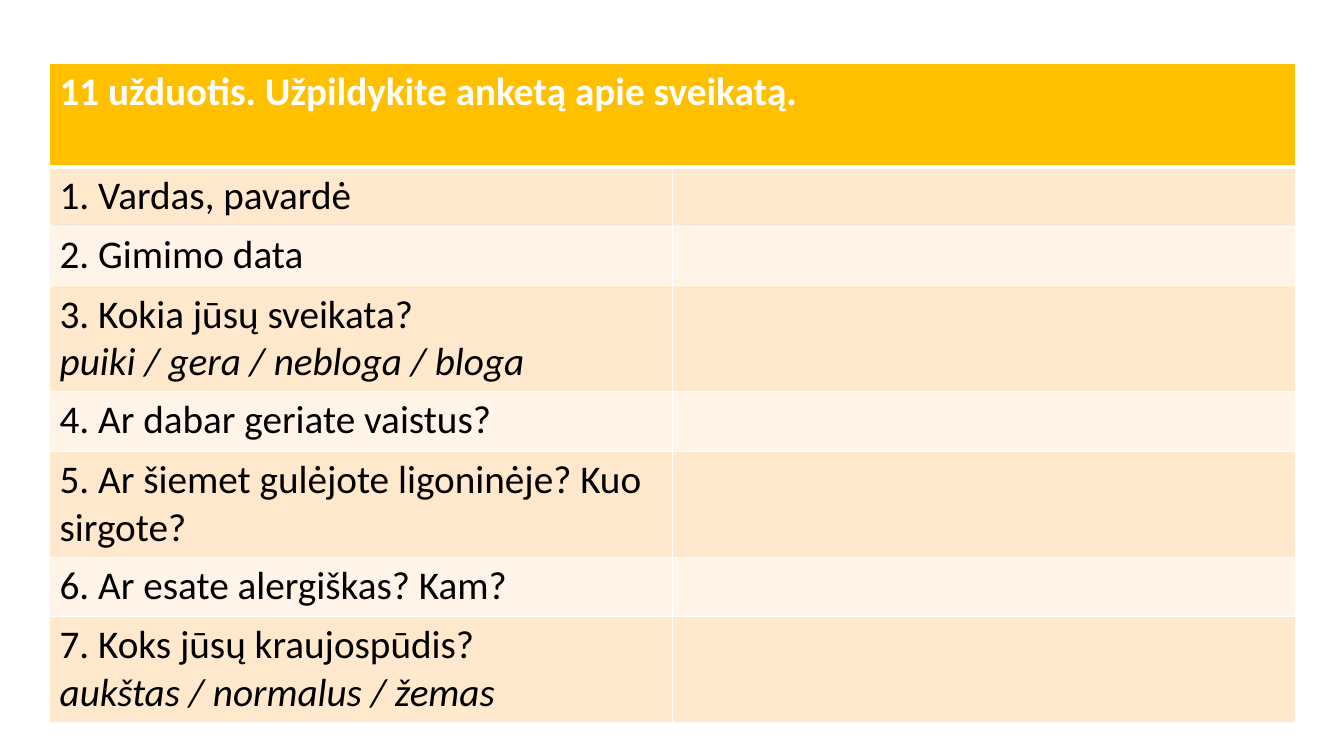
from dataclasses import dataclass

from lxml import etree
from pptx import Presentation
from pptx import util as u
from pptx.dml.color import RGBColor
from pptx.oxml import ns


@dataclass(frozen=True)
class Theme:
    font: str = "Calibri"
    size: int = 28
    header: str = "FFC000"
    bands: tuple = ("FFE8CC", "FFF4E7")
    header_text: str = "FFFFFF"
    text: str = "000000"
    border: str = "FFFFFF"
    thin: int = 1
    thick: int = 3


THEME = Theme()
TITLE = "11 užduotis. Užpildykite anketą apie sveikatą."
# Each question is followed by its answer choices, if it has any.
QUESTIONS = [
    ("1. Vardas, pavardė", ""),
    ("2. Gimimo data", ""),
    ("3. Kokia jūsų sveikata?", "puiki / gera / nebloga / bloga"),
    ("4. Ar dabar geriate vaistus?", ""),
    ("5. Ar šiemet gulėjote ligoninėje? Kuo sirgote?", ""),
    ("6. Ar esate alergiškas? Kam?", ""),
    ("7. Koks jūsų kraujospūdis?", "aukštas / normalus / žemas"),
]
ONE_LINE, TWO_LINES = u.Cm(1.5), u.Cm(2.6)
LINE_LIMIT = 40  # characters that fit on one line of a question cell


def set_borders(cell, bottom):
    properties = cell._tc.get_or_add_tcPr()
    for index, side in enumerate("LRTB"):
        width = bottom if side == "B" else THEME.thin
        line = etree.Element(ns.qn(f"a:ln{side}"), w=str(u.Pt(width)))
        fill = etree.SubElement(line, ns.qn("a:solidFill"))
        etree.SubElement(fill, ns.qn("a:srgbClr"), val=THEME.border)
        properties.insert(index, line)


def style_cell(cell, color, bottom=THEME.thin):
    cell.fill.solid()
    cell.fill.fore_color.rgb = RGBColor.from_string(color)
    set_borders(cell, bottom)


def add_run(paragraph, words, color, bold=False, italic=False):
    run = paragraph.add_run()
    run.text = words
    run.font.name = THEME.font
    run.font.size = u.Pt(THEME.size)
    run.font.bold = bold
    run.font.italic = italic
    run.font.color.rgb = RGBColor.from_string(color)


def add_header(table):
    for cell in table.rows[0].cells:
        style_cell(cell, THEME.header, THEME.thick)
    title = table.cell(0, 0)
    title.merge(table.cell(0, 1))
    add_run(title.text_frame.paragraphs[0], TITLE, THEME.header_text, bold=True)


def add_question(row, question, choices, band):
    row.height = TWO_LINES if choices or len(question) > LINE_LIMIT else ONE_LINE
    for cell in row.cells:
        style_cell(cell, band)
    frame = row.cells[0].text_frame
    add_run(frame.paragraphs[0], question, THEME.text)
    if choices:
        add_run(frame.add_paragraph(), choices, THEME.text, italic=True)


def add_questionnaire(slide, left, top, width):
    frame = slide.shapes.add_table(
        len(QUESTIONS) + 1, 2, left, top, width, ONE_LINE * (len(QUESTIONS) + 1))
    table = frame.table
    table.rows[0].height = TWO_LINES
    add_header(table)
    for index, (question, choices) in enumerate(QUESTIONS):
        band = THEME.bands[index % len(THEME.bands)]
        add_question(table.rows[index + 1], question, choices, band)
    frame.height = sum(row.height for row in table.rows)


def main():
    presentation = Presentation()
    presentation.slide_width = u.Cm(33.87)
    presentation.slide_height = u.Cm(19.05)
    slide = presentation.slides.add_slide(presentation.slide_layouts[6])
    add_questionnaire(slide, u.Cm(1.25), u.Cm(1.6), u.Cm(31.4))
    presentation.save("out.pptx")


if __name__ == "__main__":
    main()
